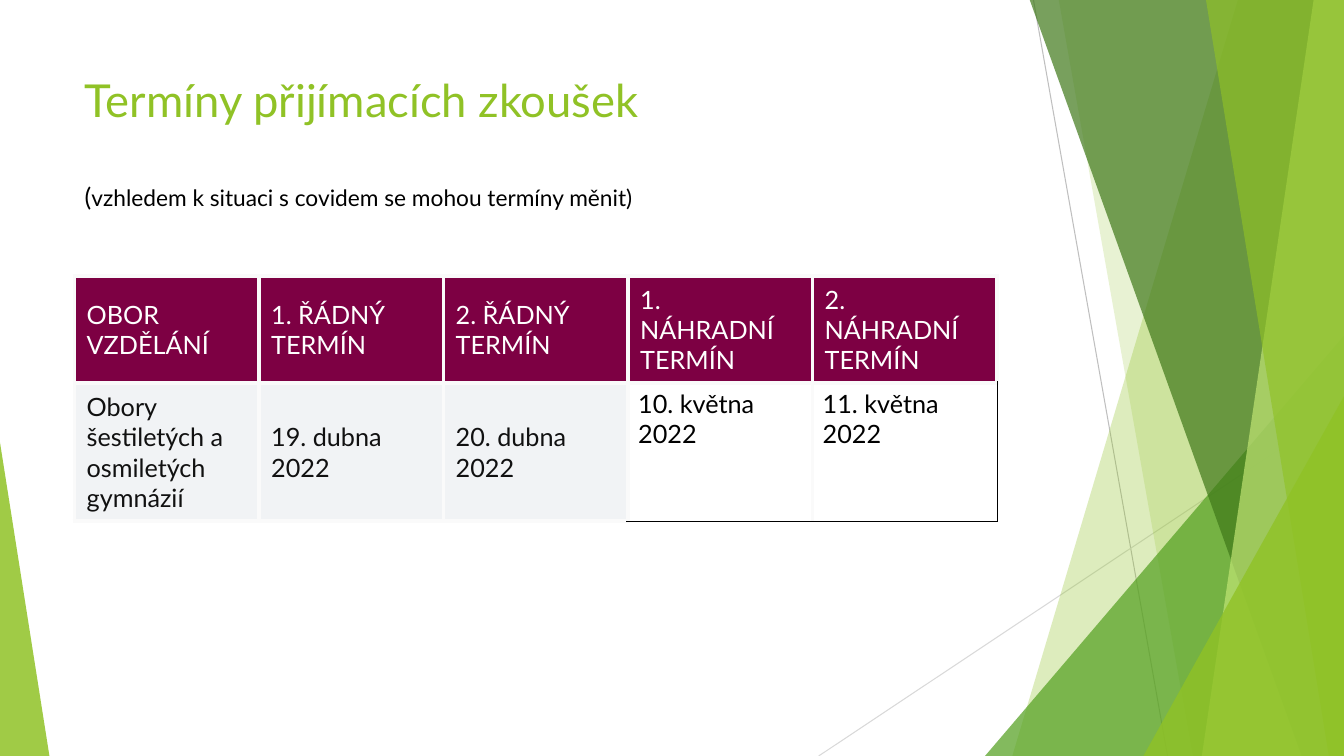
from dataclasses import dataclass

from lxml import etree
from pptx import Presentation
from pptx.dml.color import RGBColor
from pptx.enum.shapes import MSO_CONNECTOR, MSO_SHAPE
from pptx.enum.text import MSO_ANCHOR, MSO_AUTO_SIZE, PP_ALIGN
from pptx.oxml.ns import qn
from pptx.util import Pt

EMU_PER_PX = 9144  # 100 px to the inch
WIDTH, HEIGHT = 1333, 750
TOP = -1


@dataclass(frozen=True)
class Theme:
    font: str = "Lato"
    lime: str = "90C226"
    green: str = "54A021"
    forest: str = "3F7819"
    pale: str = "C0E474"
    ray: str = "BFBFBF"
    light_ray: str = "D9D9D9"
    header: str = "7D0043"
    body: str = "F1F3F5"
    grid: str = "FAFAFA"
    white: str = "FFFFFF"
    ink: str = "111111"
    black: str = "000000"
    title_size: float = 32.4
    paren_size: float = 18
    note_size: float = 16.2
    table_size: float = 18


def px(length):
    return length * EMU_PER_PX


def assign(target, values):
    for name, value in values.items():
        setattr(target, name, value)


class SlideBuilder:
    def __init__(self, slide, theme):
        self.slide = slide
        self.shapes = slide.shapes
        self.theme = theme

    def add_text(self, paragraph, text, size, color):
        run = paragraph.add_run()
        run.text = text
        assign(run.font, {"name": self.theme.font, "size": Pt(size), "bold": False})
        run.font.color.rgb = RGBColor.from_string(color)

    def title(self, box, paragraphs):
        """Each paragraph is (space before in points, [(text, size, color), ...])."""
        heading = self.shapes.title
        assign(heading, dict(zip(("left", "top", "width", "height"), map(px, box))))
        frame = heading.text_frame
        assign(frame, {"word_wrap": True, "auto_size": MSO_AUTO_SIZE.NONE,
                       "vertical_anchor": MSO_ANCHOR.TOP})
        for index, (space, runs) in enumerate(paragraphs):
            paragraph = frame.add_paragraph() if index else frame.paragraphs[0]
            assign(paragraph, {"alignment": PP_ALIGN.LEFT, "space_before": Pt(space)})
            for run in runs:
                self.add_text(paragraph, *run)

    def ray(self, start, end, color):
        line = self.shapes.add_connector(MSO_CONNECTOR.STRAIGHT, *map(px, start + end))
        line.line.width = Pt(0.75)
        line.line.color.rgb = RGBColor.from_string(color)
        etree.SubElement(line._element.spPr, qn("a:effectLst"))

    def paint(self, shape, color, opacity):
        shape.shadow.inherit = False
        shape.line.fill.background()
        shape.fill.solid()
        shape.fill.fore_color.rgb = RGBColor.from_string(color)
        tint = shape._element.spPr.find(qn("a:solidFill")).find(qn("a:srgbClr"))
        etree.SubElement(tint, qn("a:alpha"), val=str(opacity * 1000))

    def band(self, top_x, bottom_x, color, opacity):
        """Fill from a slanted left edge to the right side of the slide."""
        outline = self.shapes.build_freeform(top_x, TOP, scale=EMU_PER_PX)
        outline.add_line_segments([(WIDTH, TOP), (WIDTH, HEIGHT), (bottom_x, HEIGHT)])
        self.paint(outline.convert_to_shape(), color, opacity)

    def triangle(self, left, top, width, apex, color, opacity):
        corner = self.shapes.add_shape(MSO_SHAPE.ISOSCELES_TRIANGLE,
                                       *map(px, (left, top, width, HEIGHT - top)))
        corner.adjustments[0] = apex
        self.paint(corner, color, opacity)

    def borders(self, cell, lines):
        """Lines maps a side (L, R, T, B) to its color and width in points."""
        properties = cell._tc.get_or_add_tcPr()
        for side, (color, width) in lines.items():
            line = etree.SubElement(properties, qn(f"a:ln{side}"), w=str(Pt(width)))
            solid = etree.SubElement(line, qn("a:solidFill"))
            etree.SubElement(solid, qn("a:srgbClr"), val=color)

    def cell(self, cell, text, color, fill, lines, margins):
        self.borders(cell, lines)
        if fill:
            cell.fill.solid()
            cell.fill.fore_color.rgb = RGBColor.from_string(fill)
        else:
            cell.fill.background()
        left, top, right, bottom = map(px, margins)
        assign(cell, {"margin_left": left, "margin_top": top,
                      "margin_right": right, "margin_bottom": bottom,
                      "vertical_anchor": MSO_ANCHOR.MIDDLE if fill else MSO_ANCHOR.TOP})
        self.add_text(cell.text_frame.paragraphs[0], text, self.theme.table_size, color)

    def exam_table(self, left, top, column_width, row_heights, rows, open_from):
        """Body cells from column open_from on have no fill and a black outer edge."""
        theme = self.theme
        columns = len(rows[0])
        table = self.shapes.add_table(
            len(rows), columns, px(left), px(top),
            px(column_width * columns), px(sum(row_heights))).table
        assign(table, {"first_row": False, "horz_banding": False})
        for column in table.columns:
            column.width = px(column_width)
        for r, (texts, height) in enumerate(zip(rows, row_heights)):
            table.rows[r].height = px(height)
            for c, text in enumerate(texts):
                lines = dict.fromkeys("LRTB", (theme.grid, 3))
                margins = (12, 8, 14, 8)
                if r == 0:
                    color, fill = theme.white, theme.header
                elif c < open_from:
                    color, fill = theme.ink, theme.body
                else:
                    color, fill, margins = theme.black, None, (10, 5, 10, 5)
                    lines["B"] = (theme.black, 1)
                    if c == columns - 1:
                        lines["R"] = (theme.black, 1)
                self.cell(table.cell(r, c), text, color, fill, lines, margins)


def main():
    theme = Theme()
    deck = Presentation()
    assign(deck, {"slide_width": px(WIDTH), "slide_height": px(HEIGHT)})
    page = SlideBuilder(deck.slides.add_slide(deck.slide_layouts[5]), theme)

    page.ray((1025, 0), (1158, HEIGHT), theme.ray)
    page.ray((WIDTH, 403), (812, HEIGHT), theme.light_ray)
    page.band(1228, 1004, theme.lime, 30)
    page.band(1050, 1183, theme.lime, 20)
    page.triangle(977, 333, 356, 1, theme.green, 72)
    page.band(1021, 1291, theme.forest, 70)
    page.band(1303, 1192, theme.pale, 70)
    page.band(1196, 1318, theme.lime, 65)
    page.triangle(1134, 393, 199, 1, theme.lime, 80)
    page.triangle(0, 439, 49, 0, theme.lime, 85)

    page.title((74, 67, 940, 144), [
        (0, [("Termíny přijímacích zkoušek", theme.title_size, theme.lime)]),
        (39, [("(", theme.paren_size, theme.black),
              ("vzhledem k situaci s covidem se mohou termíny měnit)",
               theme.note_size, theme.black)]),
    ])
    page.exam_table(74, 274, 183, (104, 137), [
        ("OBOR VZDĚLÁNÍ", "1. ŘÁDNÝ TERMÍN", "2. ŘÁDNÝ TERMÍN",
         "1. NÁHRADNÍ TERMÍN", "2. NÁHRADNÍ TERMÍN"),
        ("Obory šestiletých a osmiletých gymnázií", "19. dubna 2022",
         "20. dubna 2022", "10. května 2022", "11. května 2022"),
    ], open_from=3)
    deck.save("out.pptx")


if __name__ == "__main__":
    main()
